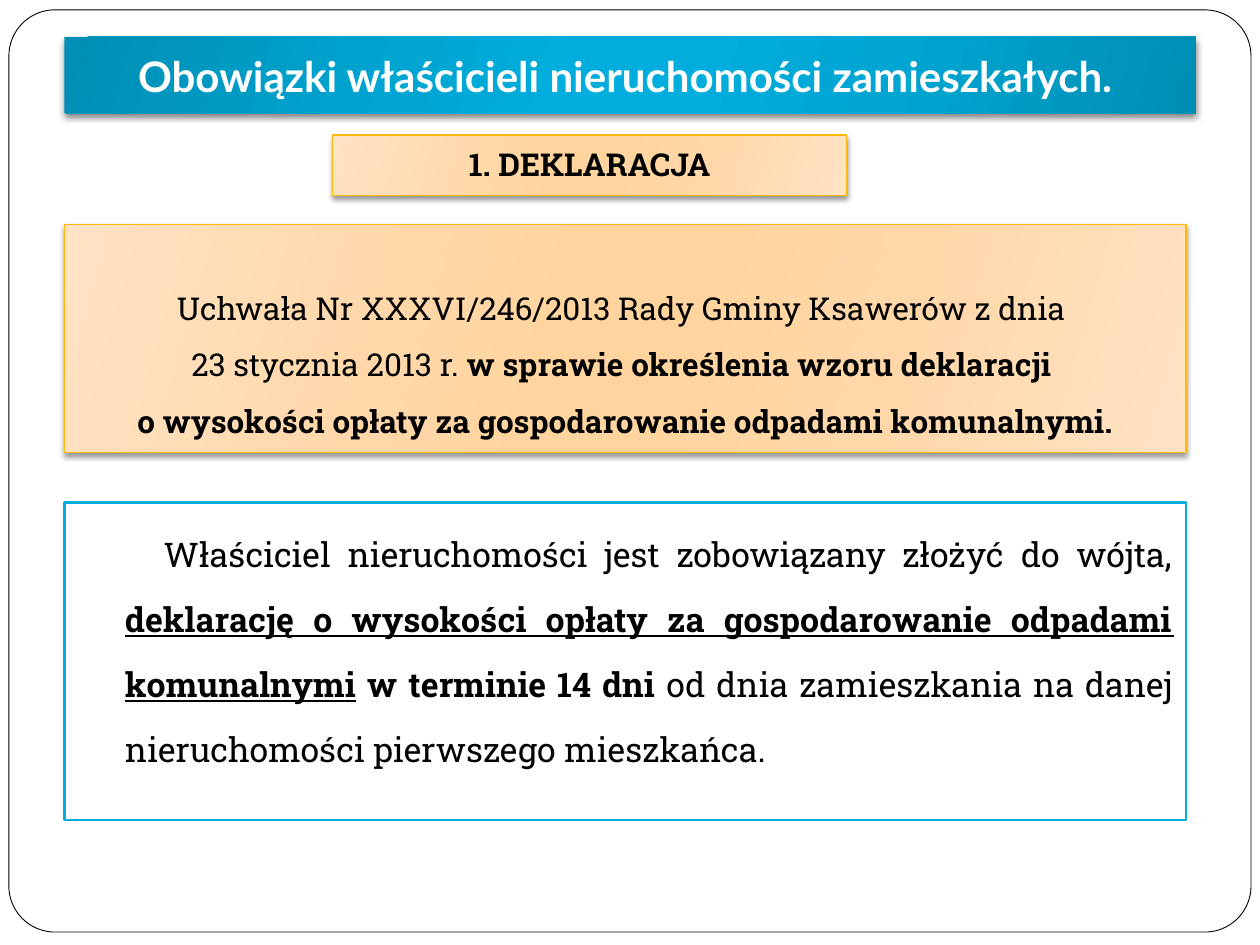
from lxml import etree
from pptx import Presentation
from pptx import util as u
from pptx.dml.color import RGBColor
from pptx.enum import shapes, text
from pptx.oxml.ns import qn

WHITE = RGBColor(0xFF, 0xFF, 0xFF)
BLACK = RGBColor(0, 0, 0)
BLUE = RGBColor(0x00, 0xAD, 0xDC)
BLUE_MID = RGBColor(0x00, 0xA5, 0xD2)
BLUE_EDGE = RGBColor(0x00, 0x8E, 0xB4)
PEACH = RGBColor(0xFF, 0xD4, 0x9F)
PEACH_MID = RGBColor(0xFF, 0xD7, 0xA9)
PEACH_EDGE = RGBColor(0xFF, 0xE3, 0xC4)
GOLD = RGBColor(0xFE, 0xB8, 0x0A)

BLUE_SHEEN = (BLUE_EDGE, BLUE_MID, BLUE)
PEACH_SHEEN = (PEACH_EDGE, PEACH_MID, PEACH)
SERIF, SANS = "Roboto Slab", "Lato"
PLAIN, BOLD, UNDERLINED = (False, False), (True, False), (True, True)


def add_panel(slide, box, line=None, width=0.75, kind=shapes.MSO_SHAPE.RECTANGLE):
    """White panel without shadow, outlined if a line colour is given."""
    panel = slide.shapes.add_shape(kind, *(u.Cm(n) for n in box))
    panel.shadow.inherit = False
    panel.fill.solid()
    panel.fill.fore_color.rgb = WHITE
    if line is None:
        panel.line.fill.background()
    else:
        panel.line.color.rgb = line
        panel.line.width = u.Pt(width)
    return panel


def add_sheen(panel, colours):
    """Gradient that mirrors edge, middle and centre colours."""
    edge, middle, centre = colours
    panel.fill.gradient()
    gradient = panel._element.spPr.find(qn("a:gradFill"))
    stops = gradient.find(qn("a:gsLst"))
    for stop in list(stops):
        stops.remove(stop)
    for percent, colour in zip((0, 30, 45, 55, 73, 100),
                               (edge, middle, centre, centre, middle, edge)):
        stop = etree.SubElement(stops, qn("a:gs"), pos=str(percent * 1000))
        etree.SubElement(stop, qn("a:srgbClr"), val=str(colour))
    gradient.find(qn("a:lin")).set("ang", str(16 * 60000))


def add_shadow(panel, blur, opacity):
    effects = panel._element.spPr.find(qn("a:effectLst"))
    shadow = etree.SubElement(effects, qn("a:outerShdw"), blurRad=str(u.Pt(blur)),
                              dist=str(u.Pt(2)), dir="5400000", rotWithShape="0")
    colour = etree.SubElement(shadow, qn("a:srgbClr"), val=str(BLACK))
    etree.SubElement(colour, qn("a:alpha"), val=str(opacity * 1000))


def write(panel, runs, size, colour=BLACK, font=SERIF,
          align=text.PP_ALIGN.CENTER, anchor=text.MSO_ANCHOR.BOTTOM, spacing=None):
    """Fill the panel with one paragraph; a newline in a run is a line break."""
    frame = panel.text_frame
    frame.word_wrap = True
    frame.vertical_anchor = anchor
    paragraph = frame.paragraphs[0]
    paragraph.alignment = align
    paragraph.line_spacing = spacing
    paragraph.font.size, paragraph.font.name = u.Pt(size), font
    paragraph.font.color.rgb = colour
    for words, (bold, underline) in runs:
        for number, part in enumerate(words.split("\n")):
            if number:
                paragraph.add_line_break()
            run = paragraph.add_run()
            run.text = part
            run.font.bold, run.font.underline = bold, underline
    return paragraph


def add_frame(slide, box):
    frame = add_panel(slide, box, BLACK, 0.5, shapes.MSO_SHAPE.ROUNDED_RECTANGLE)
    frame.adjustments[0] = 0.05


def add_banner(slide, box, runs, colours, line=None, blur=3, opacity=40, **style):
    banner = add_panel(slide, box, line)
    add_sheen(banner, colours)
    add_shadow(banner, blur, opacity)
    banner.text_frame.margin_bottom = u.Cm(0.25)
    write(banner, runs, **style)


def add_duty(slide, box, runs):
    duty = add_panel(slide, box, BLUE, 1.5)
    paragraph = write(duty, runs, 19.4, align=text.PP_ALIGN.JUSTIFY,
                      anchor=text.MSO_ANCHOR.TOP, spacing=1.6)
    paragraph.space_before = u.Pt(5.8)
    properties = paragraph._p.get_or_add_pPr()
    properties.set("marL", str(u.Cm(0.97)))
    properties.set("indent", str(u.Cm(0.78)))


def main():
    deck = Presentation()
    deck.slide_width, deck.slide_height = u.Cm(25.4), u.Cm(19.05)
    slide = deck.slides.add_slide(deck.slide_layouts[6])
    left, width = 1.3, 22.61

    add_frame(slide, (0.18, 0.2, 25.04, 18.59))

    # Owner's duty
    add_duty(slide, (left, 10.13, width, 6.4), [
        ("Właściciel nieruchomości jest zobowiązany złożyć do wójta, ", PLAIN),
        ("deklarację o wysokości opłaty za gospodarowanie odpadami komunalnymi", UNDERLINED),
        (" w terminie 14 dni ", BOLD),
        ("od dnia zamieszkania na danej nieruchomości pierwszego mieszkańca.", PLAIN)])

    # Slide heading
    add_banner(slide, (left, 0.74, 22.81, 1.55),
               [("Obowiązki właścicieli nieruchomości zamieszkałych. ", BOLD)],
               BLUE_SHEEN, blur=4, opacity=50, size=24, colour=WHITE, font=SANS)

    # Section title and the resolution behind it
    add_banner(slide, (6.71, 2.72, 10.36, 1.22), [("1. DEKLARACJA", BOLD)],
               PEACH_SHEEN, GOLD, size=18)
    add_banner(slide, (left, 4.52, width, 4.6), [
        ("Uchwała Nr XXXVI/246/2013 Rady Gminy Ksawerów z dnia \n23 stycznia 2013 r. ", PLAIN),
        ("w sprawie określenia wzoru deklaracji \n"
         "o wysokości opłaty za gospodarowanie odpadami komunalnymi.", BOLD)],
        PEACH_SHEEN, GOLD, size=18, spacing=1.5)

    deck.save("out.pptx")


if __name__ == "__main__":
    main()
